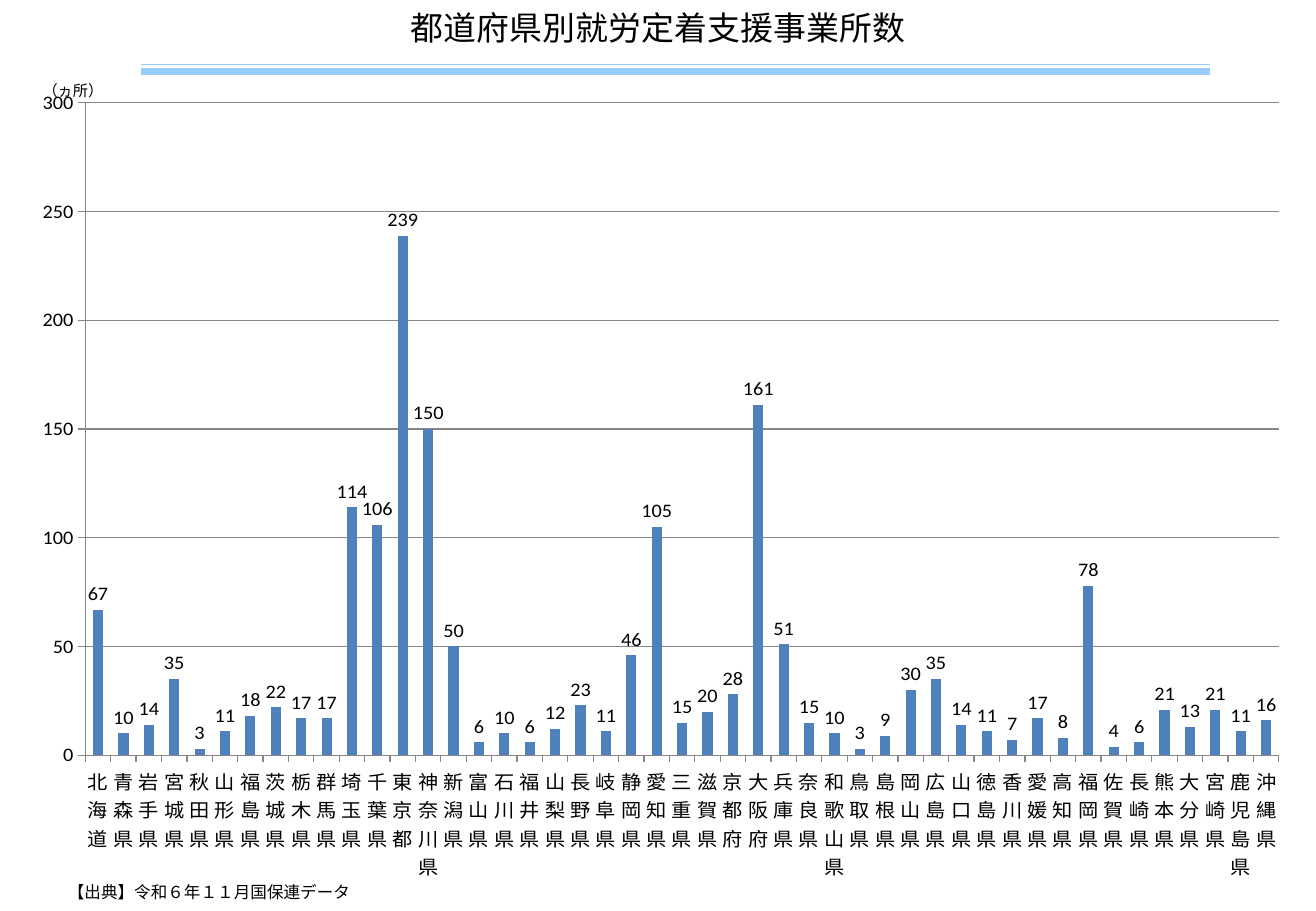
from lxml import etree
from pptx import Presentation
from pptx.chart.data import CategoryChartData
from pptx.dml.color import RGBColor
from pptx.enum.chart import XL_CHART_TYPE as ChartType
from pptx.enum.chart import XL_LABEL_POSITION as LabelPosition
from pptx.enum.chart import XL_TICK_MARK as TickMark
from pptx.enum.shapes import MSO_CONNECTOR as Connector
from pptx.enum.text import MSO_ANCHOR as Anchor
from pptx.enum.text import MSO_AUTO_SIZE as AutoSize
from pptx.enum.text import PP_ALIGN as Align
from pptx.oxml import parse_xml
from pptx.oxml.ns import qn
from pptx.util import Pt

COLORS = {"text": "000000", "rule": "99CCFF", "bar": "4F81BD", "axis": "868686"}
JAPANESE, LATIN = "Noto Sans CJK JP", "Calibri"
CHART_NS = "http://schemas.openxmlformats.org/drawingml/2006/chart"

OFFICES = {
    "北海道": 67, "青森県": 10, "岩手県": 14, "宮城県": 35, "秋田県": 3,
    "山形県": 11, "福島県": 18, "茨城県": 22, "栃木県": 17, "群馬県": 17,
    "埼玉県": 114, "千葉県": 106, "東京都": 239, "神奈川県": 150, "新潟県": 50,
    "富山県": 6, "石川県": 10, "福井県": 6, "山梨県": 12, "長野県": 23,
    "岐阜県": 11, "静岡県": 46, "愛知県": 105, "三重県": 15, "滋賀県": 20,
    "京都府": 28, "大阪府": 161, "兵庫県": 51, "奈良県": 15, "和歌山県": 10,
    "鳥取県": 3, "島根県": 9, "岡山県": 30, "広島県": 35, "山口県": 14,
    "徳島県": 11, "香川県": 7, "愛媛県": 17, "高知県": 8, "福岡県": 78,
    "佐賀県": 4, "長崎県": 6, "熊本県": 21, "大分県": 13, "宮崎県": 21,
    "鹿児島県": 11, "沖縄県": 16,
}


def color(name):
    return RGBColor.from_string(COLORS[name])


def place(shape, box):
    shape.left, shape.top, shape.width, shape.height = [Pt(length) for length in box]


def write(shape, text, size, font=JAPANESE, align=Align.LEFT, anchor=Anchor.TOP,
          wrap=True, inset=(7.2, 3.6)):
    frame = shape.text_frame
    frame.auto_size = AutoSize.NONE
    frame.word_wrap = wrap
    frame.vertical_anchor = anchor
    frame.margin_left = frame.margin_right = Pt(inset[0])
    frame.margin_top = frame.margin_bottom = Pt(inset[1])
    para = frame.paragraphs[0]
    para.alignment = align
    span = para.add_run()
    span.text = text
    span.font.size, span.font.name = Pt(size), font
    span.font.color.rgb = color("text")
    east_asian = etree.SubElement(span.font._element, qn("a:ea"))
    east_asian.set("typeface", JAPANESE)


def add_text(page, box, text, **style):
    shape = page.shapes.add_textbox(*[Pt(length) for length in box])
    write(shape, text, **style)


def add_heading(page, box):
    left, top, width, height = box
    # Title
    title = page.shapes.title
    place(title, (left - 10, top, width, height))
    write(title, "都道府県別就労定着支援事業所数", size=19.5, align=Align.CENTER,
          anchor=Anchor.MIDDLE, inset=(5.8, 2.9))
    # Double rule below the title
    for offset, weight in ((3.6, 0.75), (7.9, 4.5)):
        y = Pt(top + height + offset)
        rule = page.shapes.add_connector(Connector.STRAIGHT, Pt(left), y,
                                         Pt(left + width), y)
        rule.line.color.rgb = color("rule")
        rule.line.width = Pt(weight)
        etree.SubElement(rule._element.spPr, qn("a:effectLst"))


def format_font(font, size):
    font.name, font.size, font.bold = LATIN, Pt(size), False
    font.color.rgb = color("text")


def format_line(line):
    line.color.rgb = color("axis")
    line.width = Pt(0.75)


def set_plot_area(chart, x, y, w, h):
    marks = "".join(f'<c:{key}Mode val="edge"/>' for key in "xy")
    sizes = "".join(f'<c:{key} val="{value}"/>'
                    for key, value in zip("xywh", (x, y, w, h)))
    layout = parse_xml(f'<c:layout xmlns:c="{CHART_NS}"><c:manualLayout>'
                       f'<c:layoutTarget val="inner"/>{marks}{sizes}'
                       '</c:manualLayout></c:layout>')
    area = chart._chartSpace.chart.plotArea
    for former in area.findall(qn("c:layout")):
        area.remove(former)
    area.insert(0, layout)


def add_office_chart(page, box):
    data = CategoryChartData()
    data.categories = list(OFFICES)
    data.add_series("事業所数", list(OFFICES.values()))
    frame = page.shapes.add_chart(ChartType.COLUMN_CLUSTERED,
                                  *[Pt(length) for length in box], data)
    chart = frame.chart
    chart.has_legend = chart.has_title = False
    format_font(chart.font, 18)
    set_plot_area(chart, 0.057, 0.016, 0.914, 0.88)

    # Bars and their values
    plot = chart.plots[0]
    plot.gap_width = 150
    plot.vary_by_categories = False
    bars = plot.series[0].format
    bars.fill.solid()
    bars.fill.fore_color.rgb = color("bar")
    plot.has_data_labels = True
    plot.data_labels.show_value = True
    plot.data_labels.position = LabelPosition.OUTSIDE_END
    format_font(plot.data_labels.font, 12)

    # Axes
    for axis in (chart.category_axis, chart.value_axis):
        axis.major_tick_mark = TickMark.OUTSIDE
        axis.minor_tick_mark = TickMark.NONE
        format_font(axis.tick_labels.font, 12)
        format_line(axis.format.line)
    values = chart.value_axis
    values.minimum_scale, values.maximum_scale, values.major_unit = 0, 300, 50
    values.has_major_gridlines = True
    format_line(values.major_gridlines.format.line)

    # Upright prefecture names
    direction = chart.category_axis._element.find(qn("c:txPr")).find(qn("a:bodyPr"))
    direction.set("rot", "0")
    direction.set("vert", "eaVert")

    # Unit above the value axis
    left, top = box[:2]
    add_text(page, (left - 18.7, top - 15.8, 110.9, 31), "（ヵ所）", size=9,
             font=LATIN, align=Align.CENTER, anchor=Anchor.MIDDLE)


def add_source(page, box):
    add_text(page, box, "【出典】令和６年１１月国保連データ", size=9.8, wrap=False)


def main():
    deck = Presentation()
    deck.slide_width, deck.slide_height = Pt(780), Pt(540)
    page = deck.slides.add_slide(deck.slide_layouts[5])
    add_source(page, (33.1, 519.1, 219.6, 19.4))
    add_heading(page, (83.5, -2.2, 633.6, 36.7))
    add_office_chart(page, (6.5, 54, 774, 468))
    deck.save("out.pptx")


if __name__ == "__main__":
    main()
